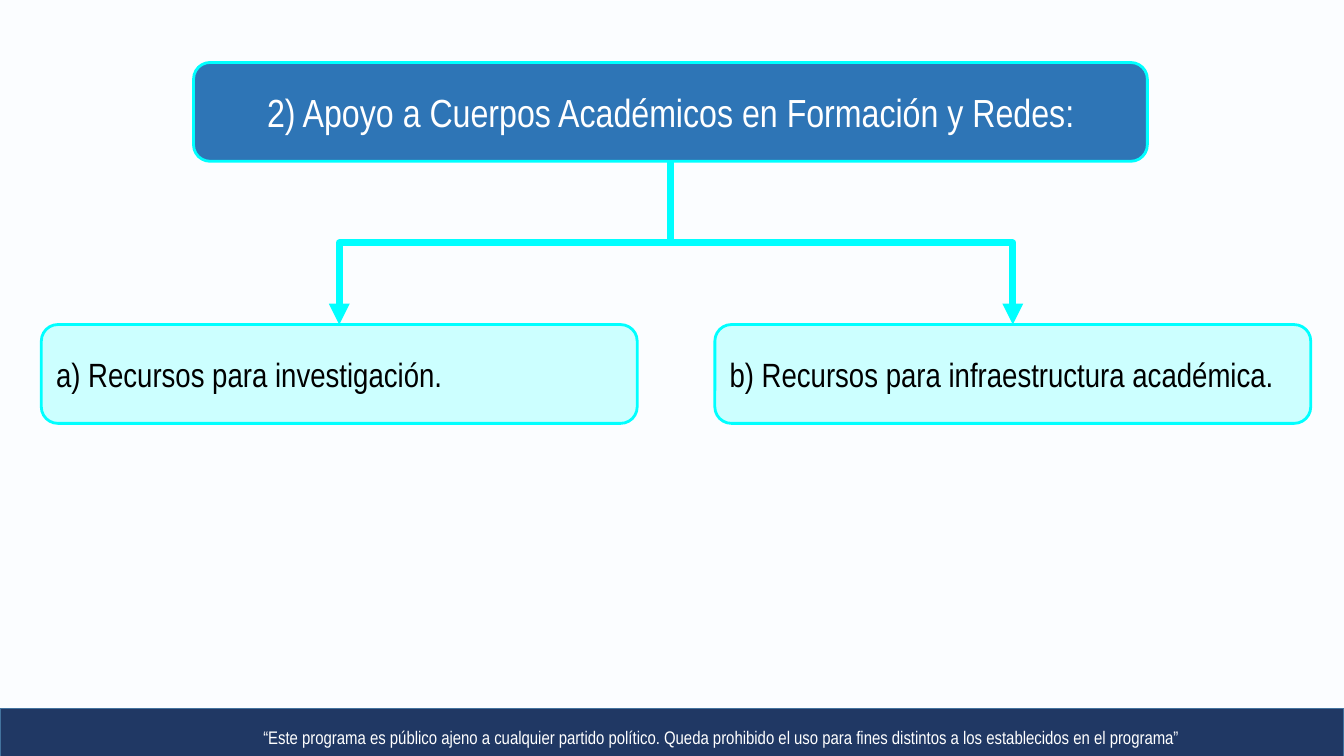
from dataclasses import dataclass
from typing import Optional

from pptx import Presentation
from pptx.dml.color import RGBColor
from pptx.enum.shapes import MSO_CONNECTOR, MSO_SHAPE
from pptx.enum.text import MSO_ANCHOR, PP_ALIGN
from pptx.oxml.ns import qn
from pptx.oxml.xmlchemy import OxmlElement
from pptx.shapes.autoshape import Shape
from pptx.slide import Slide
from pptx.util import Pt

PX = 9144


@dataclass(frozen=True)
class Theme:
    """Colours, font and type sizes of the slide."""
    back: str = "FBFDFF"
    navy: str = "203864"
    edge: str = "43739E"
    blue: str = "2E75B6"
    cyan: str = "00FFFF"
    pale: str = "CCFFFF"
    white: str = "FFFFFF"
    black: str = "000000"
    font: str = "Arial Narrow"
    large: int = 28
    body: int = 24
    small: int = 13


THEME = Theme()


@dataclass(frozen=True)
class Box:
    """A shape with optional fill, line and text."""
    left: int
    top: int
    width: int
    height: int
    fill: Optional[str] = None
    line: Optional[str] = None
    weight: int = 2
    text: str = ""
    size: int = THEME.body
    color: str = THEME.white
    align: PP_ALIGN = PP_ALIGN.CENTER
    form: MSO_SHAPE = MSO_SHAPE.ROUNDED_RECTANGLE


BAR = Box(0, 703, 1333, 55, THEME.navy, THEME.edge, 1,
          form=MSO_SHAPE.RECTANGLE)
NOTICE = Box(162, 707, 1105, 49, size=THEME.small,
             text="“Este programa es público ajeno a cualquier partido político. "
                  "Queda prohibido el uso para fines distintos a los "
                  "establecidos en el programa”")
HEAD = Box(192, 62, 946, 98, THEME.blue, THEME.cyan, size=THEME.large,
           text="2) Apoyo a Cuerpos Académicos en Formación y Redes:")
ITEMS = ("a) Recursos para investigación.",
         "b) Recursos para infraestructura académica.")
LEFT, STEP = 41, 668


def draw_box(slide: Slide, box: Box) -> Shape:
    """Draw one box with its text."""
    place = (n * PX for n in (box.left, box.top, box.width, box.height))
    shape = slide.shapes.add_shape(box.form, *place)
    shape.shadow.inherit = False
    if box.fill:
        shape.fill.solid()
        shape.fill.fore_color.rgb = RGBColor.from_string(box.fill)
    else:
        shape.fill.background()
    if box.line:
        shape.line.color.rgb = RGBColor.from_string(box.line)
        shape.line.width = Pt(box.weight)
    else:
        shape.line.fill.background()
    if box.text:
        frame = shape.text_frame
        frame.word_wrap = True
        frame.vertical_anchor = MSO_ANCHOR.MIDDLE
        para = frame.paragraphs[0]
        para.alignment = box.align
        run = para.add_run()
        run.text = box.text
        run.font.name = THEME.font
        run.font.size = Pt(box.size)
        run.font.color.rgb = RGBColor.from_string(box.color)
    return shape


def draw_link(slide: Slide, start: Shape, end: Shape) -> None:
    """Join two boxes by an elbow arrow that leaves downwards."""
    link = slide.shapes.add_connector(MSO_CONNECTOR.ELBOW, 0, 0, PX, PX)
    link.begin_connect(start, 2)
    link.end_connect(end, 0)
    link.line.color.rgb = RGBColor.from_string(THEME.cyan)
    link.line.width = Pt(5)
    tip = OxmlElement("a:tailEnd")
    tip.set("type", "triangle")
    link.line._get_or_add_ln().append(tip)
    props = link._element.spPr
    props.append(OxmlElement("a:effectLst"))
    wide, high = link.width, link.height
    mid_x, mid_y = link.left + wide // 2, link.top + high // 2
    right = link.end_x > link.begin_x
    link.left, link.top = mid_x - high // 2, mid_y - wide // 2
    link.width, link.height = high, wide
    frame = props.find(qn("a:xfrm"))
    frame.set("rot", str((270 if right else 90) * 60000))
    frame.set("flipH", "1" if right else "0")
    frame.set("flipV", "0")


def main() -> None:
    """Build the slide and save it."""
    deck = Presentation()
    deck.slide_width, deck.slide_height = 1333 * PX, 750 * PX
    slide = deck.slides.add_slide(deck.slide_layouts[6])
    ground = slide.background.fill
    ground.solid()
    ground.fore_color.rgb = RGBColor.from_string(THEME.back)
    draw_box(slide, BAR)
    draw_box(slide, NOTICE)
    head = draw_box(slide, HEAD)
    cards = [draw_box(slide, Box(LEFT + i * STEP, 322, 591, 98, THEME.pale,
                                 THEME.cyan, text=text, color=THEME.black,
                                 align=PP_ALIGN.JUSTIFY))
             for i, text in enumerate(ITEMS)]
    for card in cards:
        draw_link(slide, head, card)
    deck.save("out.pptx")


if __name__ == "__main__":
    main()
